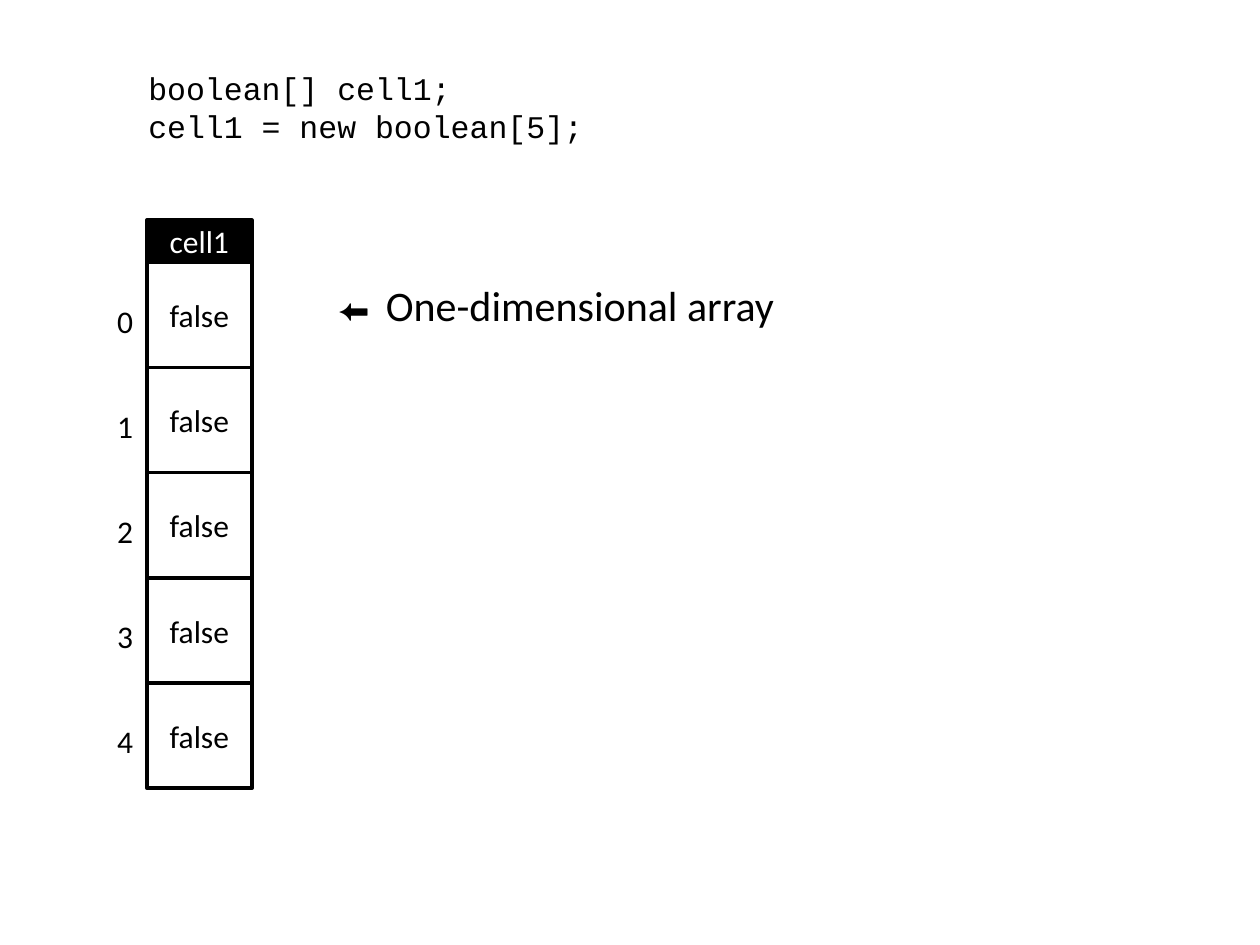
from dataclasses import dataclass

from lxml.etree import SubElement
from pptx import Presentation
from pptx.dml.color import RGBColor
from pptx.enum.shapes import MSO_SHAPE
from pptx.enum.text import MSO_ANCHOR, MSO_AUTO_SIZE, PP_ALIGN
from pptx.oxml.ns import qn
from pptx.slide import Slide
from pptx.text.text import TextFrame, _Paragraph
from pptx.util import Cm, Pt

BLACK = "000000"
WHITE = "FFFFFF"
COLUMN_LEFT = 2.96
COLUMN_WIDTH = 2.12
HEADER_TOP = 4.44
HEADER_HEIGHT = 0.85
CELL_HEIGHT = 2.12
INDEX_LEFT = 2.11
INDEX_OFFSET = 0.67
VALUES = ["false"] * 5


@dataclass
class Box:
    left: float
    top: float
    width: float
    height: float


def color(hex_code: str) -> RGBColor:
    return RGBColor.from_string(hex_code)


def write(paragraph: _Paragraph, text: str, *, size: int = 18,
          font: str = "Calibri", ink: str = BLACK) -> None:
    run = paragraph.add_run()
    run.text = text
    run.font.size = Pt(size)
    run.font.name = font
    run.font.color.rgb = color(ink)


def add_label(slide: Slide, box: Box) -> TextFrame:
    label = slide.shapes.add_textbox(
        Cm(box.left), Cm(box.top), Cm(box.width), Cm(box.height))
    frame = label.text_frame
    frame.word_wrap = False
    frame.auto_size = MSO_AUTO_SIZE.SHAPE_TO_FIT_TEXT
    return frame


def add_cell(slide: Slide, box: Box, text: str, *, fill: str = WHITE,
             ink: str = BLACK) -> None:
    cell = slide.shapes.add_shape(
        MSO_SHAPE.RECTANGLE,
        Cm(box.left), Cm(box.top), Cm(box.width), Cm(box.height))
    cell.shadow.inherit = False
    cell.fill.solid()
    cell.fill.fore_color.rgb = color(fill)
    cell.line.color.rgb = color(BLACK)
    cell.line.width = Pt(2)
    cell.text_frame.vertical_anchor = MSO_ANCHOR.MIDDLE
    paragraph = cell.text_frame.paragraphs[0]
    paragraph.alignment = PP_ALIGN.CENTER
    write(paragraph, text, ink=ink)


def add_code(slide: Slide) -> None:
    frame = add_label(slide, Box(2.74, 1.27, 9.32, 1.8))
    declaration, creation = frame.paragraphs[0], frame.add_paragraph()
    write(declaration, "boolean[] cell1;", font="Courier New")
    write(creation, "cell1 = new boolean[5];", font="Courier New")


def add_array(slide: Slide) -> None:
    add_cell(slide, Box(COLUMN_LEFT, HEADER_TOP, COLUMN_WIDTH, HEADER_HEIGHT),
             "cell1", fill=BLACK, ink=WHITE)
    for index, value in enumerate(VALUES):
        top = HEADER_TOP + HEADER_HEIGHT + index * CELL_HEIGHT
        add_cell(slide, Box(COLUMN_LEFT, top, COLUMN_WIDTH, CELL_HEIGHT), value)
        frame = add_label(slide, Box(INDEX_LEFT, top + INDEX_OFFSET, 0.84, 1.02))
        write(frame.paragraphs[0], str(index))


def add_caption(slide: Slide) -> None:
    caption = add_label(slide, Box(6.56, 5.5, 9.7, 1.27)).paragraphs[0]
    write(caption, "⬅")
    write(caption, "\tOne-dimensional array", size=24)
    tab_stops = SubElement(caption._p.get_or_add_pPr(), qn("a:tabLst"))
    SubElement(tab_stops, qn("a:tab"), pos=str(Cm(0.97)), algn="l")


def main() -> None:
    presentation = Presentation()
    presentation.slide_width = Cm(25.4)
    presentation.slide_height = Cm(19.05)
    slide = presentation.slides.add_slide(presentation.slide_layouts[6])
    add_code(slide)
    add_array(slide)
    add_caption(slide)
    presentation.save("out.pptx")


if __name__ == "__main__":
    main()
